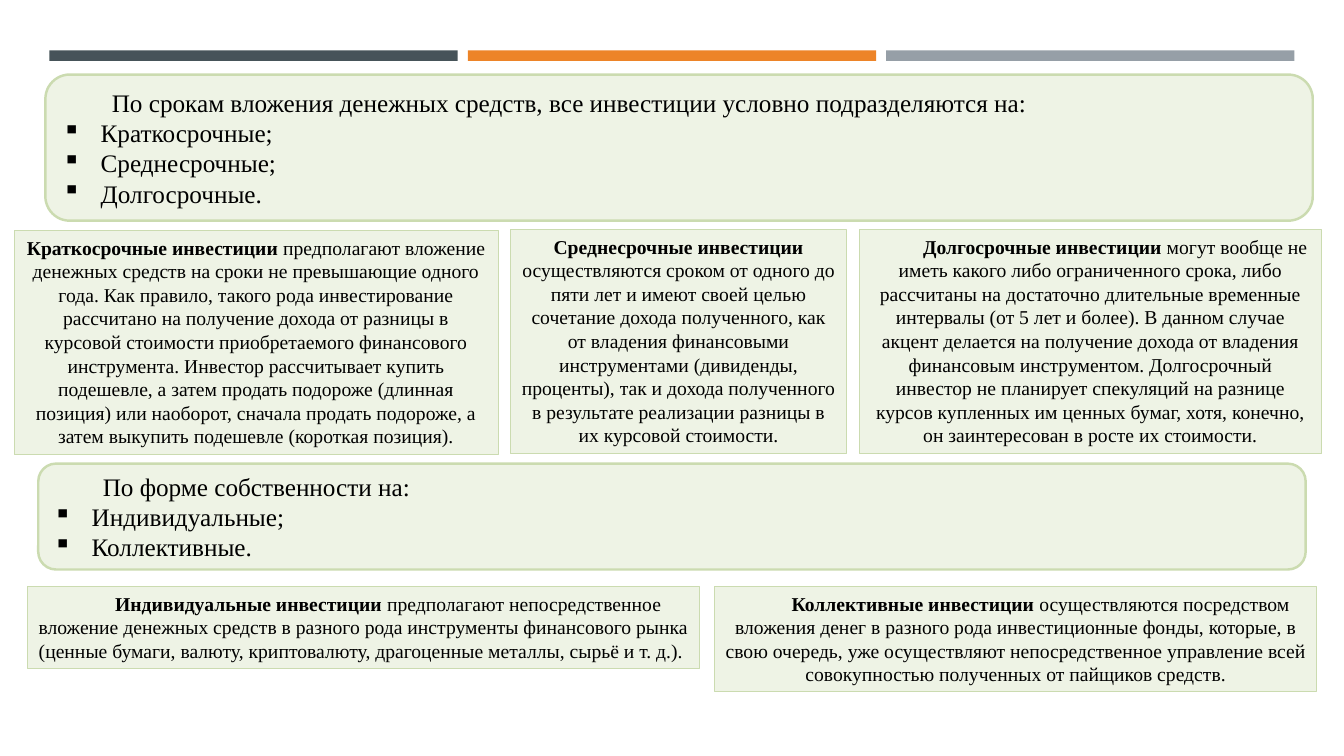
import pptx
import pptx.util
import pptx.dml.color
import pptx.enum.shapes
import pptx.enum.text
import lxml.etree
from dataclasses import dataclass

Inches = pptx.util.Inches
Shape = pptx.enum.shapes.MSO_SHAPE
Align = pptx.enum.text.PP_ALIGN
Anchor = pptx.enum.text.MSO_ANCHOR
Fit = pptx.enum.text.MSO_AUTO_SIZE


@dataclass(frozen=True)
class Theme:
    font: str = "Times New Roman"
    ink: str = "000000"
    fill: str = "EEF3E5"
    edge: str = "CBDBB0"
    bars: tuple = ("465359", "ED8428", "969FA7")
    head: int = 18
    body: int = 14
    thick: float = 1.75
    thin: float = 0.75
    indent: float = 0.49
    hang: float = 0.38
    tab: float = 0.5


theme = Theme()
WIDE, HIGH = 13.33, 7.5


def paint(color):
    return pptx.dml.color.RGBColor.from_string(color)


def block(slide, kind, box, fill, line=None):
    x, y, w, h = box
    shape = slide.shapes.add_shape(
        kind,
        Inches(WIDE * x / 100), Inches(HIGH * y / 100),
        Inches(WIDE * w / 100), Inches(HIGH * h / 100))
    shape.shadow.inherit = False
    shape.fill.solid()
    shape.fill.fore_color.rgb = paint(fill)
    if line:
        shape.line.color.rgb = paint(theme.edge)
        shape.line.width = pptx.util.Pt(line)
    else:
        shape.line.fill.background()
    return shape


def write(para, text, *, size, bold=False, align=Align.CENTER, left=0, first=0, mark=None):
    para.alignment = align
    props = para._p.get_or_add_pPr()
    props.set("marL", str(Inches(left)))
    props.set("indent", str(Inches(first)))
    if mark and not para.runs:
        space = pptx.oxml.ns.qn
        lxml.etree.SubElement(props, space("a:buChar"), char=mark)
        tabs = lxml.etree.SubElement(props, space("a:tabLst"))
        lxml.etree.SubElement(tabs, space("a:tab"), pos=str(Inches(theme.tab)), algn="l")
    run = para.add_run()
    run.text = text
    run.font.name = theme.font
    run.font.size = pptx.util.Pt(size)
    run.font.bold = bold
    run.font.color.rgb = paint(theme.ink)


def stripes(slide, box):
    x, y, w, h = box
    gap = 0.75
    width = (w - 2 * gap) / 3
    for index, color in enumerate(theme.bars):
        block(slide, Shape.RECTANGLE, (x + index * (width + gap), y, width, h), color)


def panel(slide, box, title, items):
    frame = block(slide, Shape.ROUNDED_RECTANGLE, box, theme.fill, theme.thick).text_frame
    frame.word_wrap = True
    frame.vertical_anchor = Anchor.MIDDLE
    write(frame.paragraphs[0], title, size=theme.head, align=Align.JUSTIFY, first=theme.indent)
    for item in items:
        write(frame.add_paragraph(), item, size=theme.head, align=Align.JUSTIFY,
              left=theme.hang, first=-theme.hang, mark="▪")


def card(slide, box, term, text, first=0):
    frame = block(slide, Shape.RECTANGLE, box, theme.fill, theme.thin).text_frame
    frame.word_wrap = True
    frame.auto_size = Fit.SHAPE_TO_FIT_TEXT
    frame.vertical_anchor = Anchor.TOP
    para = frame.paragraphs[0]
    write(para, term, size=theme.body, bold=True, first=first)
    write(para, text, size=theme.body, first=first)


TERMS = ("По срокам вложения денежных средств, все инвестиции условно подразделяются на:",
         ("Краткосрочные;", "Среднесрочные;", "Долгосрочные."))
FORMS = ("По форме собственности на:", ("Индивидуальные;", "Коллективные."))
CARDS = (
    ((1.05, 30.53, 36.01, 29.6), "Краткосрочные инвестиции",
     " предполагают вложение денежных средств на сроки не превышающие одного года. "
     "Как правило, такого рода инвестирование рассчитано на получение дохода от разницы "
     "в курсовой стоимости приобретаемого финансового инструмента. Инвестор рассчитывает "
     "купить подешевле, а затем продать подороже (длинная позиция) или наоборот, сначала "
     "продать подороже, а затем выкупить подешевле (короткая позиция).", 0),
    ((37.96, 30.4, 25.06, 29.6), "Среднесрочные инвестиции",
     " осуществляются сроком от одного до пяти лет и имеют своей целью сочетание дохода "
     "полученного, как от владения финансовыми инструментами (дивиденды, проценты), так и "
     "дохода полученного в результате реализации разницы в их курсовой стоимости.", 0),
    ((63.92, 30.4, 34.43, 29.6), "Долгосрочные инвестиции",
     " могут вообще не иметь какого либо ограниченного срока, либо рассчитаны на достаточно "
     "длительные временные интервалы (от 5 лет и более). В данном случае акцент делается на "
     "получение дохода от владения финансовым инструментом. Долгосрочный инвестор не планирует "
     "спекуляций на разнице курсов купленных им ценных бумаг, хотя, конечно, он заинтересован "
     "в росте их стоимости.", theme.indent),
    ((2.03, 77.6, 50.04, 10.8), "Индивидуальные инвестиции",
     " предполагают непосредственное вложение денежных средств в разного рода инструменты "
     "финансового рынка (ценные бумаги, валюту, криптовалюту, драгоценные металлы, "
     "сырьё и т. д.). ", theme.indent),
    ((53.19, 77.6, 44.79, 13.87), "Коллективные инвестиции",
     " осуществляются посредством вложения денег в разного рода инвестиционные фонды, которые, "
     "в свою очередь, уже осуществляют непосредственное управление всей совокупностью "
     "полученных от пайщиков средств.", theme.indent),
)


def main():
    deck = pptx.Presentation()
    deck.slide_width, deck.slide_height = Inches(WIDE), Inches(HIGH)
    slide = deck.slides.add_slide(deck.slide_layouts[6])
    stripes(slide, (3.68, 6.67, 92.64, 1.4))
    panel(slide, (3.38, 9.87, 94.3, 19.33), *TERMS)
    panel(slide, (2.85, 61.33, 94.3, 14), *FORMS)
    for item in CARDS:
        card(slide, *item)
    deck.save("out.pptx")


if __name__ == "__main__":
    main()
